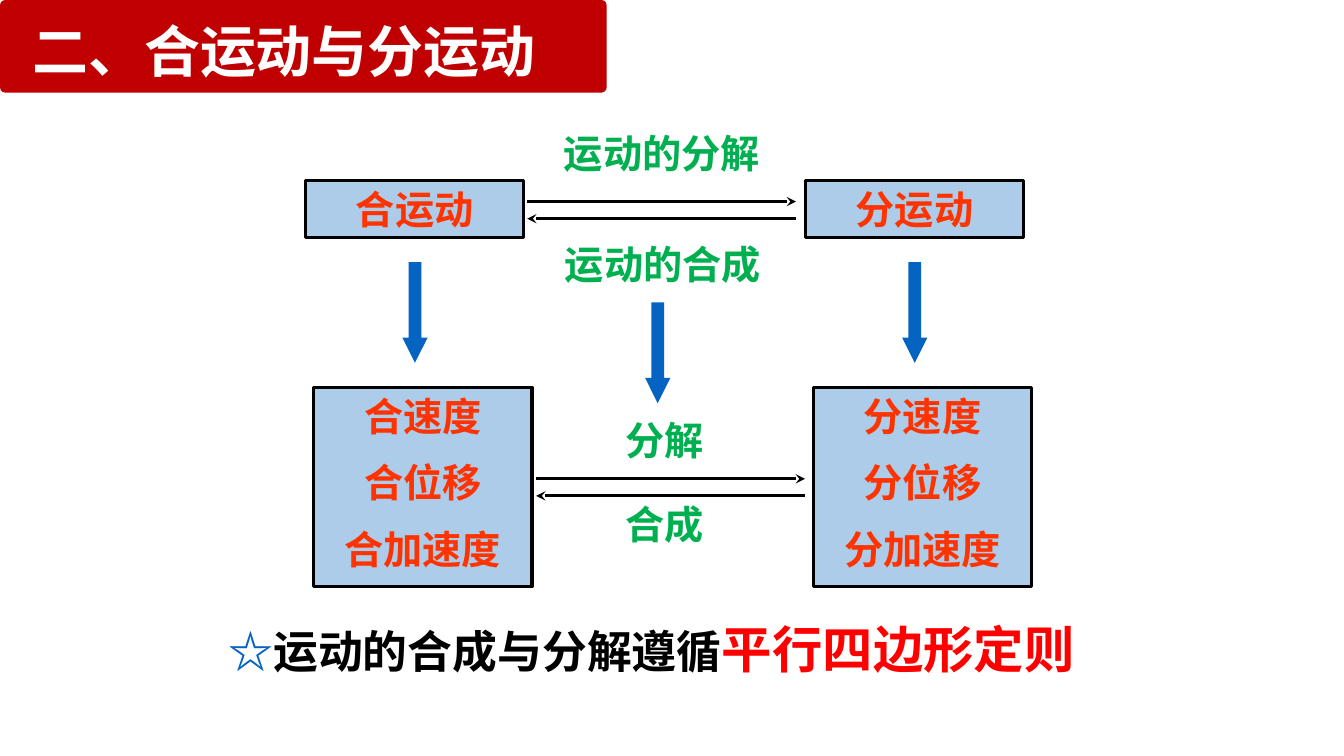
from pptx import Presentation
from pptx.dml.color import RGBColor
from pptx.enum.shapes import MSO_CONNECTOR as LINE, MSO_SHAPE as SHAPE
from pptx.enum.text import MSO_ANCHOR as ANCHOR, MSO_AUTO_SIZE as FIT, PP_ALIGN as ALIGN
from pptx.oxml.ns import qn
from pptx.util import Pt
from lxml.etree import SubElement

BLACK, WHITE, RED = "000000", "FFFFFF", "FF0000"
BLUE, GREEN, ORANGE = "0563C1", "00B050", "FF3300"
COLUMN_STEP = 357


def rgb(color):
    return RGBColor.from_string(color)


def set_font(r, size, color):
    for name, value in {"name": "Times New Roman", "size": Pt(size), "bold": True}.items():
        setattr(r.font, name, value)
    r.font.color.rgb = rgb(color)


def write(sp, paragraphs, align=ALIGN.CENTER, gap=0):
    """Fill a shape with paragraphs, each a list of (text, size, color) runs."""
    tf = sp.text_frame
    frame = {"word_wrap": True, "auto_size": FIT.NONE, "vertical_anchor": ANCHOR.TOP,
             "margin_left": Pt(7.2), "margin_right": Pt(7.2),
             "margin_top": Pt(3.6), "margin_bottom": Pt(3.6)}
    for name, value in frame.items():
        setattr(tf, name, value)
    for i, runs in enumerate(paragraphs):
        p = tf.add_paragraph() if i else tf.paragraphs[0]
        p.alignment = align
        p.space_before = Pt(gap if i else 0)
        for text, size, color in runs:
            r = p.add_run()
            r.text = text
            set_font(r, size, color)


def add_solid(s, kind, box, color, adjustments=()):
    sp = s.shapes.add_shape(kind, *map(Pt, box))
    sp.shadow.inherit = False
    sp.fill.solid()
    sp.fill.fore_color.rgb = rgb(color)
    sp.line.fill.background()
    for i, value in enumerate(adjustments):
        sp.adjustments[i] = value
    return sp


def add_term_box(s, x, y, h, terms):
    sp = add_solid(s, SHAPE.RECTANGLE, (x, y, 156, h), "5B9BD5")
    fill = sp._element.spPr.find(qn("a:solidFill"))
    SubElement(fill[0], qn("a:alpha"), val="50000")
    sp.line.color.rgb = rgb(BLACK)
    sp.line.width = Pt(2.25)
    write(sp, [[(term, 28, ORANGE)] for term in terms], gap=14)


def add_label(s, text, box):
    write(s.shapes.add_textbox(*map(Pt, box)), [[(text, 28, GREEN)]])


def add_down_arrow(s, x, y):
    add_solid(s, SHAPE.DOWN_ARROW, (x, y, 18, 72), BLUE, (0.5, 1))


def add_arrow_pair(s, x, y):
    """Draw a rightward arrow with a leftward one just below it."""
    for top, end in ((y, "a:tailEnd"), (y + 12.2, "a:headEnd")):
        c = s.shapes.add_connector(LINE.STRAIGHT, Pt(x), Pt(top), Pt(x + 192), Pt(top))
        c.line.color.rgb = rgb(BLACK)
        c.line.width = Pt(2.25)
        SubElement(c.line._get_or_add_ln(), qn(end), type="stealth")
        SubElement(c._element.spPr, qn("a:effectLst"))


def add_title(s, text):
    add_solid(s, SHAPE.ROUNDED_RECTANGLE, (0, 0, 433.4, 66.2), "C00000", (0.058,))
    title = s.shapes.title
    box = {"left": 15.8, "top": 7.9, "width": 488.9, "height": 55.4}
    for name, value in box.items():
        setattr(title, name, Pt(value))
    write(title, [[(text, 40, WHITE)]], ALIGN.LEFT)
    title._element.getparent().append(title._element)  # in front of the banner


def add_rule(s):
    sp = s.shapes.add_textbox(Pt(156.2), Pt(437.8), Pt(628.6), Pt(51))
    write(sp, [[("☆", 32, BLUE), ("运动的合成与分解遵循", 32, BLACK),
                ("平行四边形定则", 36, RED)]], ALIGN.LEFT)


def main():
    prs = Presentation()
    prs.slide_width, prs.slide_height = Pt(960), Pt(540)
    s = prs.slides.add_slide(prs.slide_layouts[5])
    add_title(s, "二、合运动与分运动")

    for column, prefix in enumerate("合分"):
        shift = column * COLUMN_STEP
        add_term_box(s, 218.2 + shift, 129, 41, [prefix + "运动"])
        add_down_arrow(s, 287.4 + shift, 187.2)
        add_term_box(s, 224 + shift, 276.5, 142.5,
                     [prefix + quantity for quantity in ("速度", "位移", "加速度")])

    add_arrow_pair(s, 376.6, 144)
    add_arrow_pair(s, 383, 342)
    add_down_arrow(s, 460.8, 216)

    add_label(s, "运动的分解", (373, 88.6, 199.4, 41))
    add_label(s, "运动的合成", (370.8, 167.8, 205.2, 41))
    add_label(s, "分解", (419, 293.8, 111.6, 41))
    add_label(s, "合成", (437, 354.2, 75.6, 41))
    add_rule(s)
    prs.save("out.pptx")


if __name__ == "__main__":
    main()
